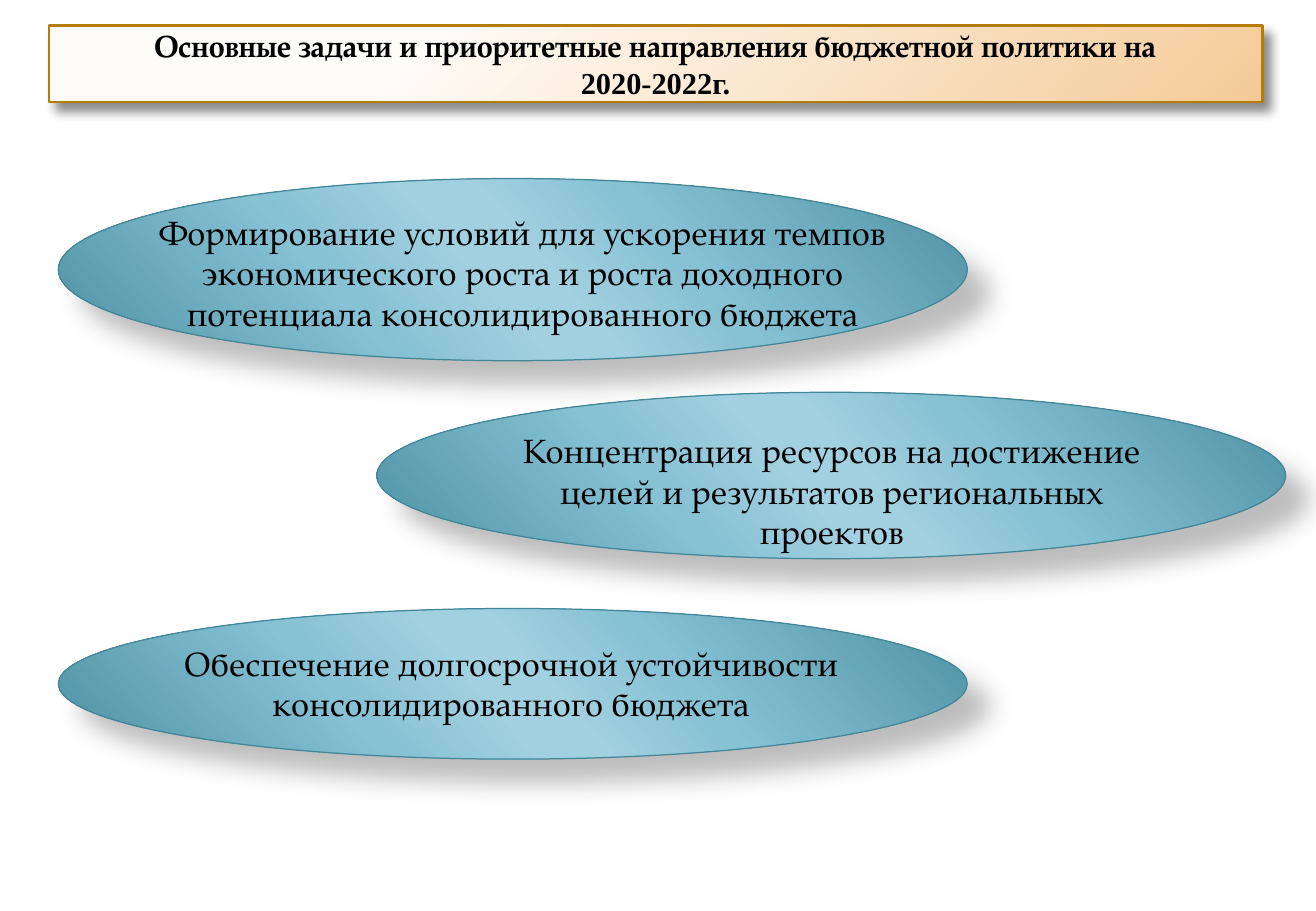
from lxml.etree import SubElement
from pptx import Presentation
from pptx.dml.color import RGBColor
from pptx.enum.shapes import MSO_SHAPE
from pptx.enum.text import MSO_ANCHOR, MSO_AUTO_SIZE, PP_ALIGN
from pptx.oxml.ns import qn
from pptx.util import Inches, Pt

BLACK = RGBColor(0x00, 0x00, 0x00)
TEAL_DARK = RGBColor(0x4D, 0x91, 0xA3)
TEAL = RGBColor(0x86, 0xC1, 0xD4)
TEAL_LIGHT = RGBColor(0xA1, 0xD0, 0xE0)
TEAL_LINE = RGBColor(0x42, 0x86, 0x98)
CREAM = RGBColor(0xFF, 0xFB, 0xF7)
PEACH = RGBColor(0xF4, 0xCB, 0x98)
GOLD_LINE = RGBColor(0xB4, 0x7D, 0x0A)
FONT = "TeX Gyre Pagella"

TEAL_STOPS = [(0, TEAL_DARK), (33, TEAL), (47, TEAL_LIGHT),
              (53, TEAL_LIGHT), (68, TEAL), (100, TEAL_DARK)]
TITLE_STOPS = [(0, CREAM), (30, CREAM), (100, PEACH)]


def set_gradient(shape, stops, angle):
    shape.fill.gradient()
    gradient = shape._element.spPr.find(qn("a:gradFill"))
    stop_list = gradient.find(qn("a:gsLst"))
    for stop in list(stop_list):
        stop_list.remove(stop)
    for position, color in stops:
        stop = SubElement(stop_list, qn("a:gs"), pos=str(position * 1000))
        SubElement(stop, qn("a:srgbClr"), val=str(color))
    gradient.find(qn("a:lin")).set("ang", str(angle * 60000))


def set_shadow(shape, opacity, blur, distance):
    shape.shadow.inherit = False
    effects = shape._element.spPr.find(qn("a:effectLst"))
    shadow = SubElement(effects, qn("a:outerShdw"), blurRad=str(Pt(blur)),
                        dist=str(Pt(distance)), dir=str(45 * 60000),
                        algn="tl", rotWithShape="0")
    color = SubElement(shadow, qn("a:srgbClr"), val=str(BLACK))
    SubElement(color, qn("a:alpha"), val=str(opacity * 1000))


presentation = Presentation()
presentation.slide_width = Inches(10.83)
presentation.slide_height = Inches(7.5)
slide = presentation.slides.add_slide(presentation.slide_layouts[5])

# Title banner
title = slide.shapes.title
title.left, title.top = Inches(0.4), Inches(0.21)
title.width, title.height = Inches(9.99), Inches(0.63)
set_gradient(title, TITLE_STOPS, 45)
title.line.color.rgb = GOLD_LINE
title.line.width = Pt(1.25)
set_shadow(title, 45, 6, 6)
title.text_frame.auto_size = MSO_AUTO_SIZE.NONE
title.text_frame.vertical_anchor = MSO_ANCHOR.MIDDLE
paragraph = title.text_frame.paragraphs[0]
paragraph.alignment = PP_ALIGN.CENTER
for index, (text, font_name) in enumerate([
    ("Основные задачи и приоритетные направления бюджетной политики на", FONT),
    ("2020-2022г.", "Times New Roman"),
]):
    if index:
        paragraph.add_line_break()
    run = paragraph.add_run()
    run.text = text
    run.font.name = font_name
    run.font.size = Pt(18)
    run.font.bold = True
    run.font.color.rgb = BLACK

# Goals: ellipse (left, top, height), text box (left, top, width, height), text
goals = [
    ((0.48, 1.47, 1.5), (1.11, 1.69, 6.38, 1.11),
     "Формирование условий для ускорения темпов экономического роста "
     "и роста доходного потенциала консолидированного бюджета"),
    ((3.1, 3.23, 1.37), (3.97, 3.49, 5.75, 1.11),
     "Концентрация ресурсов на достижение целей и результатов "
     "региональных проектов"),
    ((0.48, 5.01, 1.24), (1.33, 5.24, 5.75, 0.77),
     "Обеспечение долгосрочной устойчивости консолидированного бюджета"),
]
for (left, top, height), text_area, text in goals:
    ellipse = slide.shapes.add_shape(MSO_SHAPE.OVAL, Inches(left), Inches(top),
                                     Inches(7.48), Inches(height))
    set_gradient(ellipse, TEAL_STOPS, 139)
    ellipse.line.color.rgb = TEAL_LINE
    ellipse.line.width = Pt(0.75)
    set_shadow(ellipse, 26, 15, 18)

    text_box = slide.shapes.add_textbox(*map(Inches, text_area))
    frame = text_box.text_frame
    frame.word_wrap = True
    frame.auto_size = MSO_AUTO_SIZE.SHAPE_TO_FIT_TEXT
    paragraph = frame.paragraphs[0]
    paragraph.text = text
    paragraph.alignment = PP_ALIGN.CENTER
    paragraph.font.name = FONT
    paragraph.font.size = Pt(20)
    paragraph.font.color.rgb = BLACK

presentation.save("out.pptx")
